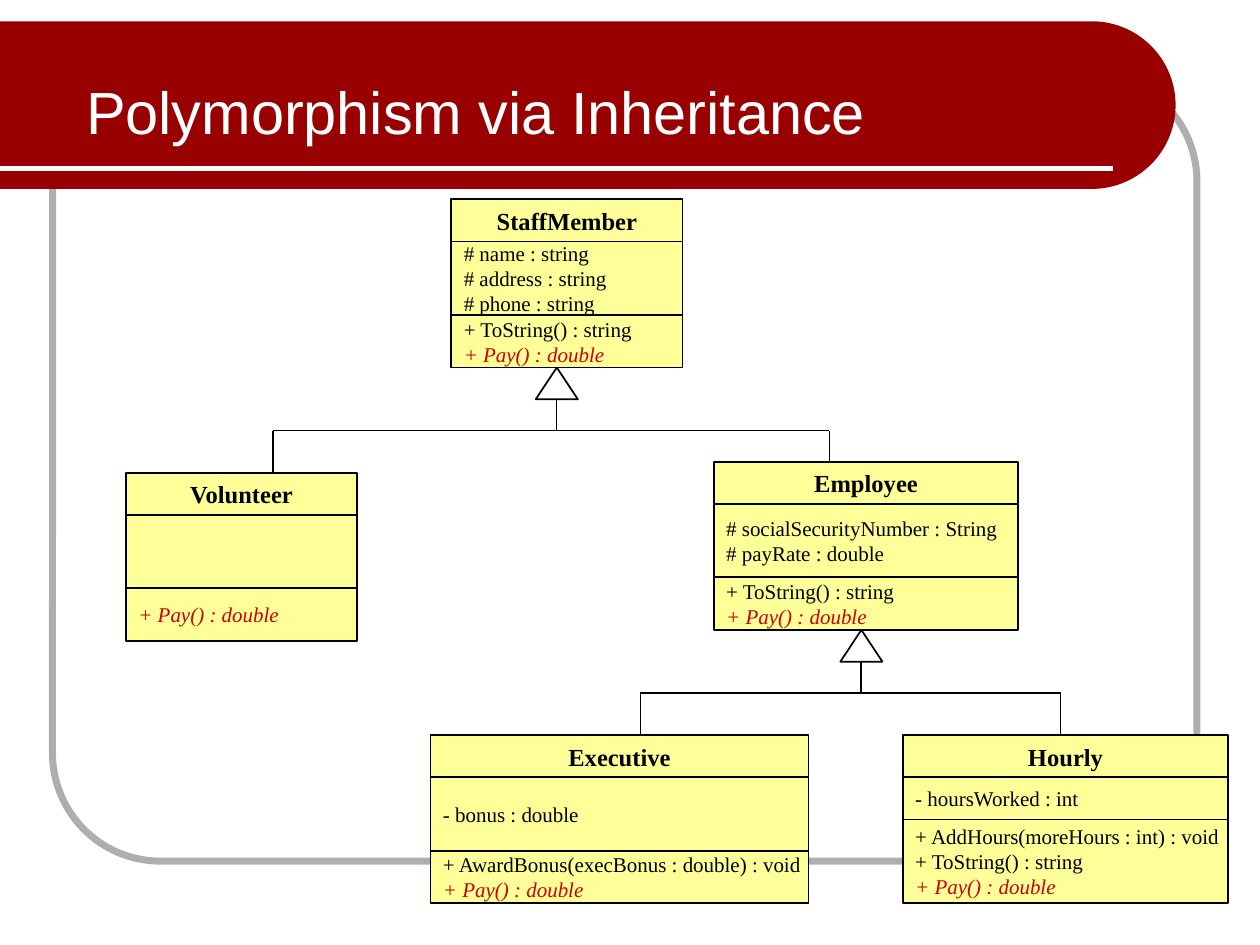
from math import cos, pi, sin

from lxml import etree
from pptx import Presentation
from pptx.dml.color import RGBColor
from pptx.enum.shapes import MSO_CONNECTOR, MSO_SHAPE
from pptx.enum.text import MSO_ANCHOR, PP_ALIGN
from pptx.oxml.ns import qn
from pptx.util import Cm, Pt

STRAIGHT = MSO_CONNECTOR.STRAIGHT
RECTANGLE = MSO_SHAPE.RECTANGLE
ROUNDED = MSO_SHAPE.ROUNDED_RECTANGLE
TRIANGLE = MSO_SHAPE.ISOSCELES_TRIANGLE
MIDDLE = MSO_ANCHOR.MIDDLE
LEFT, CENTER = PP_ALIGN.LEFT, PP_ALIGN.CENTER

COLORS = {name: RGBColor.from_string(value) for name, value in {
    "banner": "990000", "frame": "AEAEAE", "white": "FFFFFF",
    "box": "FFFF99", "black": "000000", "override": "CC0000",
}.items()}

presentation = Presentation()
presentation.slide_width, presentation.slide_height = Cm(25.4), Cm(19.05)
slide = presentation.slides.add_slide(presentation.slide_layouts[5])
shapes = slide.shapes


def add_line(x1, y1, x2, y2, color="black", width=1):
    line = shapes.add_connector(STRAIGHT, Cm(x1), Cm(y1), Cm(x2), Cm(y2))
    line.line.color.rgb = COLORS[color]
    line.line.width = Pt(width)
    etree.SubElement(line._element.spPr, qn("a:effectLst"))


def add_outlined(kind, left, top, width, height, fill=None, line="black", weight=1):
    shape = shapes.add_shape(kind, Cm(left), Cm(top), Cm(width), Cm(height))
    shape.shadow.inherit = False
    if fill:
        shape.fill.solid()
        shape.fill.fore_color.rgb = COLORS[fill]
    else:
        shape.fill.background()
    shape.line.color.rgb = COLORS[line]
    shape.line.width = Pt(weight)
    return shape


# Grey frame
frame = add_outlined(ROUNDED, 1.06, 1.48, 23.07, 15.88, line="frame", weight=4)
frame.adjustments[0] = 0.137

# Red banner with a half-round right end
RADIUS, ARC_X, ARC_Y, STEPS = 1.69, 22.01, 2.12, 60
angles = [-pi / 2 + pi * step / STEPS for step in range(STEPS + 1)]
arc = [(Cm(ARC_X + RADIUS * cos(angle)), Cm(ARC_Y + RADIUS * sin(angle)))
       for angle in angles]
builder = shapes.build_freeform(0, Cm(ARC_Y - RADIUS))
builder.add_line_segments(arc + [(0, Cm(ARC_Y + RADIUS))], close=True)
banner = builder.convert_to_shape()
banner.shadow.inherit = False
banner.fill.solid()
banner.fill.fore_color.rgb = COLORS["banner"]
banner.line.fill.background()
add_line(0, 3.39, 22.44, 3.39, "white", 3)

# Title, brought in front of the banner
title = shapes.title
title.left, title.top, title.width, title.height = Cm(1.48), Cm(0.64), Cm(22.66), Cm(3.18)
title.text_frame.text = "Polymorphism via Inheritance"
title.text_frame.vertical_anchor = MIDDLE
paragraph = title.text_frame.paragraphs[0]
paragraph.alignment = LEFT
paragraph.font.name = "Arial"
paragraph.font.size = Pt(34)
paragraph.font.color.rgb = COLORS["white"]
shapes._spTree.append(title._element)

# Inheritance links: parent x, parent bottom, branch y, (child x, child top)
links = [
    (11.22, 7.41, 8.68, [(5.5, 9.53), (16.72, 9.31)]),
    (17.36, 12.7, 13.97, [(12.91, 14.82), (21.38, 14.82)]),
]
for parent_x, parent_bottom, branch_y, children in links:
    add_line(children[0][0], branch_y, children[-1][0], branch_y)
    add_line(parent_x, branch_y, parent_x, parent_bottom)
    for child_x, child_top in children:
        add_line(child_x, branch_y, child_x, child_top)
    add_outlined(TRIANGLE, parent_x - 0.42, parent_bottom, 0.85, 0.64, "white")

# Class boxes: left, top, width, section heights, name, attributes, methods
PAY = "+ Pay() : double"
TO_STRING = "+ ToString() : string"
USUAL = (0.85, 1.48, 1.06)
classes = [
    (9.1, 4.02, 4.66, USUAL, "StaffMember",
     ["# name : string", "# address : string", "# phone : string"], [TO_STRING, PAY]),
    (2.54, 9.53, 4.66, USUAL, "Volunteer", [], [PAY]),
    (14.39, 9.31, 6.14, USUAL, "Employee",
     ["# socialSecurityNumber : String", "# payRate : double"], [TO_STRING, PAY]),
    (8.68, 14.82, 7.62, USUAL, "Executive",
     ["- bonus : double"], ["+ AwardBonus(execBonus : double) : void", PAY]),
    (18.2, 14.82, 6.56, (0.85, 0.85, 1.69), "Hourly",
     ["- hoursWorked : int"], ["+ AddHours(moreHours : int) : void", TO_STRING, PAY]),
]
for left, top, width, heights, name, attributes, methods in classes:
    for height, lines in zip(heights, ([name], attributes, methods)):
        section = add_outlined(RECTANGLE, left, top, width, height, "box")
        top += height
        if not lines:
            continue
        text_frame = section.text_frame
        text_frame.word_wrap = False
        text_frame.vertical_anchor = MIDDLE
        text_frame.text = "\n".join(lines)
        for paragraph in text_frame.paragraphs:
            is_name, is_pay = paragraph.text == name, paragraph.text == PAY
            paragraph.alignment = CENTER if is_name else LEFT
            paragraph.font.name = "Times New Roman"
            paragraph.font.size = Pt(14 if is_name else 12)
            paragraph.font.bold = is_name
            paragraph.font.italic = is_pay
            paragraph.font.color.rgb = COLORS["override" if is_pay else "black"]

presentation.save("out.pptx")
